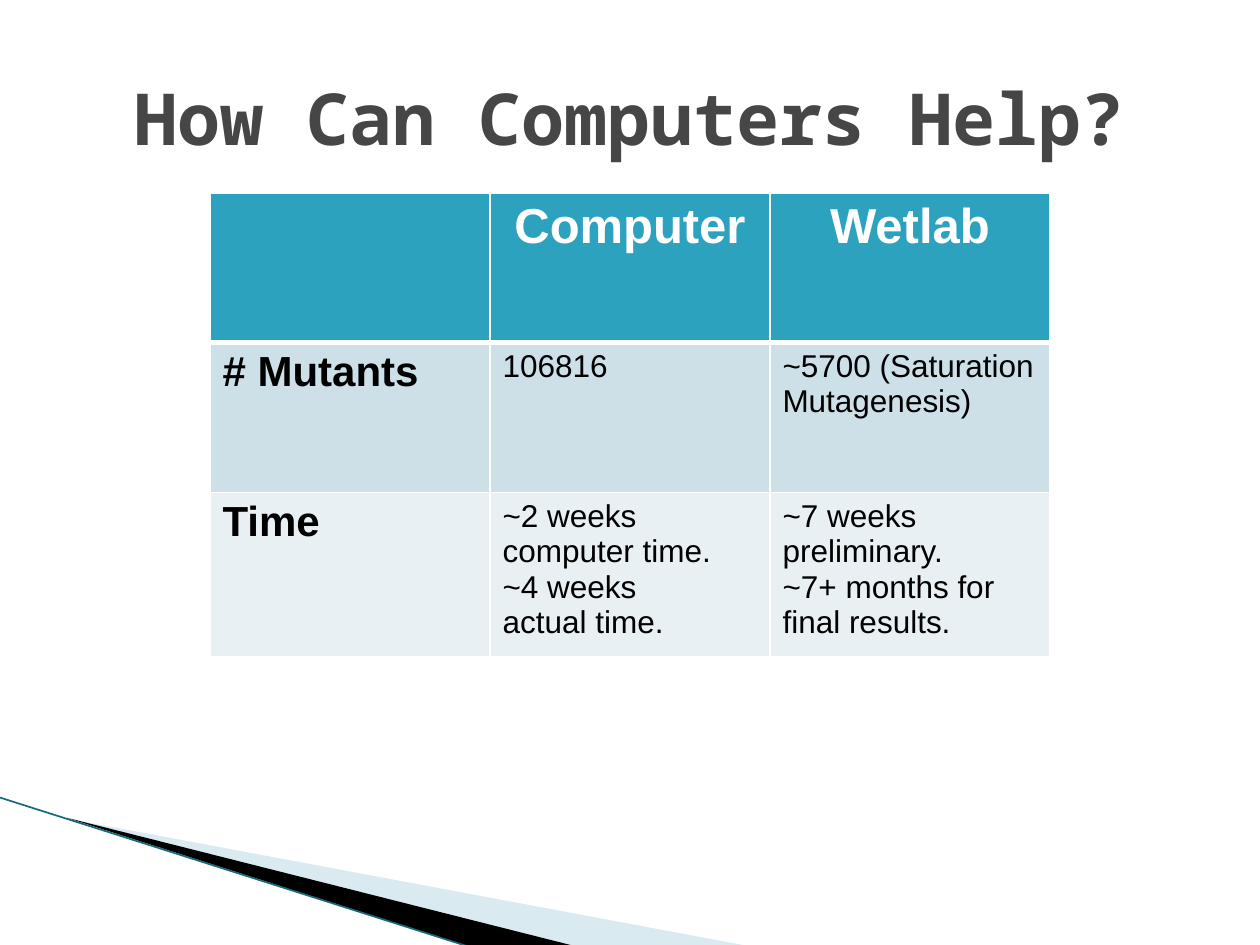
from lxml.etree import SubElement
from pptx import Presentation
from pptx.dml.color import RGBColor
from pptx.enum.shapes import MSO_CONNECTOR
from pptx.enum.text import MSO_ANCHOR, PP_ALIGN
from pptx.oxml.ns import qn
from pptx.util import Inches, Pt

TITLE = "How Can Computers Help?"
# \v is a line break, \n starts a new paragraph
ROWS = [
    ["", "Computer", "Wetlab"],
    ["# Mutants", "106816", "~5700 (Saturation Mutagenesis)"],
    ["Time", "~2 weeks computer time.\n~4 weeks \vactual time.",
     "~7 weeks \vpreliminary.\n~7+ months for final results."],
]
ROW_FILLS = ["2DA2BF", "CDE0E8", "E8F0F4"]
# Corner points, fill colour and opacity in percent
WEDGES = [
    ([(0.55, 6.5), (5.95, 7.51), (4.56, 7.51)], "A0CBDC", 40),
    ([(0.53, 6.49), (4.57, 7.51), (3.72, 7.51)], "000000", 100),
]
EDGE_START, EDGE_END, EDGE_COLOR = (0, 6.33), (3.71, 7.51), "16697A"

SLIDE_W, SLIDE_H = 10, 7.5
TABLE_W, TABLE_TOP, ROW_H = SLIDE_W * 2 / 3, 1.53, 1.19


def rgb(color):
    return RGBColor.from_string(color)


def style_font(font, face, size, color, bold):
    font.name, font.size, font.bold = face, Pt(size), bold
    font.color.rgb = rgb(color)


def add_border(cell, side, width):
    line = SubElement(cell._tc.get_or_add_tcPr(), qn(f"a:ln{side}"), w=str(Pt(width)))
    SubElement(SubElement(line, qn("a:solidFill")), qn("a:srgbClr"), val="FFFFFF")


def draw_corner(slide):
    for points, color, opacity in WEDGES:
        start, *rest = [(Inches(x), Inches(y)) for x, y in points]
        builder = slide.shapes.build_freeform(*start)
        builder.add_line_segments(rest, close=True)
        wedge = builder.convert_to_shape()
        wedge.shadow.inherit = False
        wedge.fill.solid()
        wedge.fill.fore_color.rgb = rgb(color)
        wedge.line.fill.background()
        if opacity < 100:
            clr = wedge._element.spPr.find(".//" + qn("a:srgbClr"))
            SubElement(clr, qn("a:alpha"), val=str(opacity * 1000))
    edge = slide.shapes.add_connector(
        MSO_CONNECTOR.STRAIGHT, *map(Inches, EDGE_START + EDGE_END))
    edge.line.color.rgb = rgb(EDGE_COLOR)
    edge.line.width = Pt(0.95)
    SubElement(edge._element.spPr, qn("a:effectLst"))


def draw_title(slide):
    title = slide.shapes.add_textbox(
        Inches(0.5), Inches(0.3), Inches(SLIDE_W - 1), Inches(1.25))
    frame = title.text_frame
    frame.word_wrap = True
    frame.vertical_anchor = MSO_ANCHOR.MIDDLE
    frame.text = TITLE
    heading = frame.paragraphs[0]
    heading.alignment = PP_ALIGN.CENTER
    style_font(heading.runs[0].font, "Noto Sans Mono", 41, "464646", True)


def draw_table(slide):
    table = slide.shapes.add_table(
        len(ROWS), len(ROWS[0]), Inches((SLIDE_W - TABLE_W) / 2), Inches(TABLE_TOP),
        Inches(TABLE_W), Inches(ROW_H * len(ROWS))).table
    for r, (texts, fill) in enumerate(zip(ROWS, ROW_FILLS)):
        for c, text in enumerate(texts):
            cell = table.cell(r, c)
            header = r == 0
            # The rule under the header row is thicker
            for side in "LRTB":
                thick = (r, side) in [(0, "B"), (1, "T")]
                add_border(cell, side, 3 if thick else 1)
            cell.fill.solid()
            cell.fill.fore_color.rgb = rgb(fill)
            cell.text_frame.text = text
            size = 28 if header else 24 if c == 0 else 18
            for paragraph in cell.text_frame.paragraphs:
                paragraph.alignment = PP_ALIGN.CENTER if header else PP_ALIGN.LEFT
                for run in paragraph.runs:
                    style_font(run.font, "Arial", size,
                               "FFFFFF" if header else "000000", header or c == 0)


def main():
    deck = Presentation()
    deck.slide_width, deck.slide_height = Inches(SLIDE_W), Inches(SLIDE_H)
    slide = deck.slides.add_slide(deck.slide_layouts[6])
    draw_corner(slide)
    draw_title(slide)
    draw_table(slide)
    deck.save("out.pptx")


if __name__ == "__main__":
    main()
